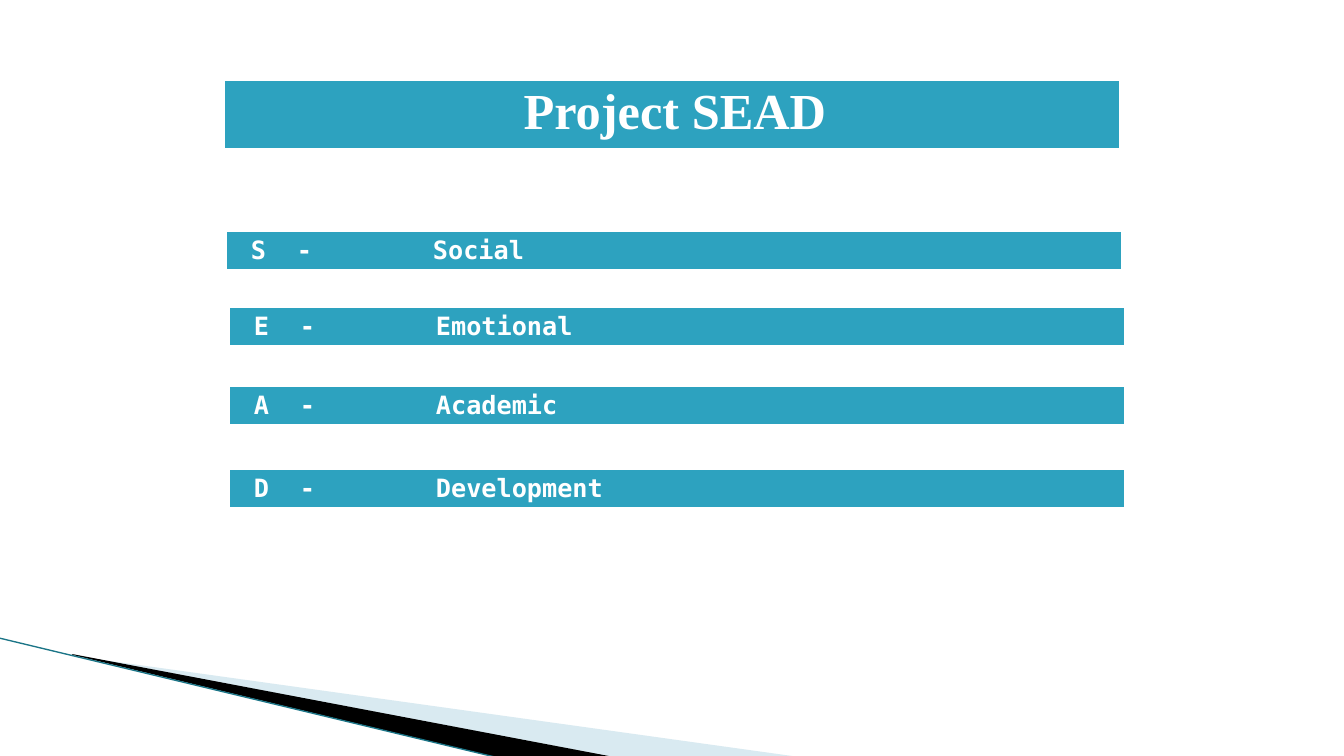
import pptx
import pptx.dml.color
import pptx.enum.shapes
import pptx.enum.text
import pptx.oxml
import pptx.oxml.ns
import pptx.util

RGBColor = pptx.dml.color.RGBColor
TEAL = RGBColor(0x2D, 0xA2, 0xBF)
DARK_TEAL = RGBColor(0x1B, 0x75, 0x87)
PALE_BLUE = RGBColor(0xA0, 0xCB, 0xDC)
BLACK = RGBColor(0, 0, 0)
WHITE = RGBColor(0xFF, 0xFF, 0xFF)

EMU_PER_PX = 914400 / 100.8
NS = 'xmlns:a="http://schemas.openxmlformats.org/drawingml/2006/main"'


def px(length):
    return pptx.util.Emu(round(length * EMU_PER_PX))


class SlideBuilder:
    title_font = "Times New Roman"
    row_font = "DejaVu Sans Mono"
    borders = {"lnL": 1, "lnR": 1, "lnT": 1, "lnB": 3}

    def __init__(self, slide):
        self.slide = slide

    def wedge(self, points, color, opacity=100):
        outline = self.slide.shapes.build_freeform(*points[0], scale=EMU_PER_PX)
        outline.add_line_segments(points[1:], close=True)
        wedge = outline.convert_to_shape()
        wedge.shadow.inherit = False
        wedge.fill.solid()
        wedge.fill.fore_color.rgb = color
        wedge.line.fill.background()
        if opacity < 100:
            tint = wedge.fill._xPr.find(".//" + pptx.oxml.ns.qn("a:srgbClr"))
            tint.append(pptx.oxml.parse_xml(f'<a:alpha {NS} val="{opacity * 1000}"/>'))

    def line(self, start, end, color, width):
        edge = self.slide.shapes.add_connector(
            pptx.enum.shapes.MSO_CONNECTOR.STRAIGHT, *map(px, start + end))
        edge.line.color.rgb = color
        edge.line.width = pptx.util.Pt(width)
        edge._element.spPr.append(pptx.oxml.parse_xml(f"<a:effectLst {NS}/>"))

    def bar(self, left, top, width, height, text, font, size, inset,
            centered=False, tabs=()):
        """A one-cell table with white borders."""
        table = self.slide.shapes.add_table(
            1, 1, px(left), px(top), px(width), px(height)).table
        table.first_row = table.horz_banding = False
        cell = table.cell(0, 0)
        cell.margin_left = px(inset)
        for side, points in self.borders.items():
            cell._tc.get_or_add_tcPr().append(pptx.oxml.parse_xml(
                f'<a:{side} {NS} w="{points * 12700}"><a:solidFill>'
                f'<a:srgbClr val="{WHITE}"/></a:solidFill></a:{side}>'))
        cell.fill.solid()
        cell.fill.fore_color.rgb = TEAL

        paragraph = cell.text_frame.paragraphs[0]
        if centered:
            paragraph.alignment = pptx.enum.text.PP_ALIGN.CENTER
        if tabs:
            stops = "".join(f'<a:tab pos="{px(stop)}" algn="l"/>' for stop in tabs)
            paragraph._p.get_or_add_pPr().append(
                pptx.oxml.parse_xml(f"<a:tabLst {NS}>{stops}</a:tabLst>"))
        run = paragraph.add_run()
        run.text = text
        run.font.name = font
        run.font.size = pptx.util.Pt(size)
        run.font.bold = True
        run.font.color.rgb = WHITE


def main():
    deck = pptx.Presentation()
    deck.slide_width, deck.slide_height = px(1344), px(756)
    page = SlideBuilder(deck.slides.add_slide(deck.slide_layouts[6]))

    # Corner decoration
    page.wedge([(74, 656), (799, 757), (613, 757), (74, 655)], PALE_BLUE, opacity=40)
    page.wedge([(72, 654), (614, 757), (500, 758), (73, 655)], BLACK)
    page.line((-1, 638), (499, 758), DARK_TEAL, 0.95)

    # Title
    page.bar(224, 80, 896, 70, "Project SEAD", page.title_font, 36,
             inset=16, centered=True)

    # What each letter stands for
    meanings = [(226, 231, "Social"), (229, 307, "Emotional"),
                (229, 386, "Academic"), (229, 469, "Development")]
    for left, top, word in meanings:
        page.bar(left, top, 896, 40, f"{word[0]}\t-\t{word}", page.row_font, 18,
                 inset=25, tabs=(46, 182))

    deck.save("out.pptx")


if __name__ == "__main__":
    main()
